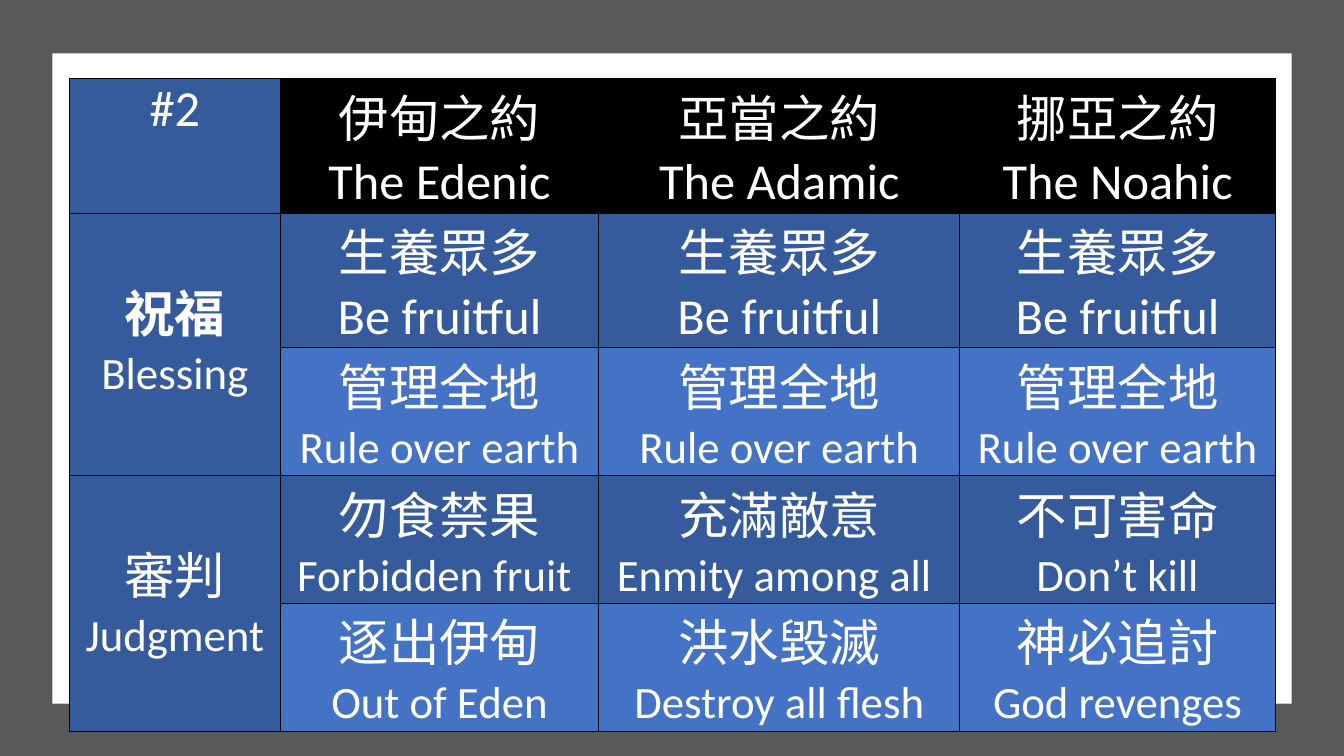
from lxml.etree import SubElement
from pptx import Presentation
from pptx.dml.color import RGBColor
from pptx.enum.shapes import MSO_SHAPE
from pptx.enum.text import PP_ALIGN
from pptx.oxml.ns import qn
from pptx.util import Inches, Pt

GREY, WHITE, BLACK = "595959", "FFFFFF", "000000"
DARK_BLUE, LIGHT_BLUE = "365B9D", "4472C4"
COLUMN_WIDTHS = [2.09, 3.16, 3.58, 3.13]
ROW_HEIGHTS = [0.99, 1.2, 1.14, 1.13, 1.27]

LATIN_LARGE = {"size": Pt(36), "name": "Calibri", "bold": False}
LATIN_SMALL = {**LATIN_LARGE, "size": Pt(32)}
CHINESE = {**LATIN_LARGE, "name": "Roboto"}
CHINESE_BOLD = {**CHINESE, "bold": True}
MARGINS = {"margin_left": Inches(0.15), "margin_right": Inches(0.15),
           "margin_top": 0, "margin_bottom": 0}

COVENANTS = [
    [[("伊甸之約", LATIN_LARGE)], [("The Edenic", LATIN_LARGE)]],
    [[("亞當之約", LATIN_LARGE)], [("The Adamic", LATIN_LARGE)]],
    [[("挪", CHINESE), ("亞之約", LATIN_LARGE)], [("The Noahic", LATIN_LARGE)]],
]
THEMES = {
    1: [[("祝福", CHINESE_BOLD)], [("Blessing", LATIN_SMALL)]],
    3: [[("審判", CHINESE), ("Judgment", LATIN_SMALL)]],
}
TERMS = [
    (LATIN_LARGE, [("生養眾多", "Be fruitful")] * 3),
    (LATIN_SMALL, [("管理全地", "Rule over earth")] * 3),
    (LATIN_SMALL, [("勿食禁果", "Forbidden fruit "), ("充滿敵意", "Enmity among all "),
                   ("不可害命", "Don’t kill")]),
    (LATIN_SMALL, [("逐出伊甸", "Out of Eden"), ("洪水毀滅", "Destroy all flesh"),
                   ("神必追討", "God revenges")]),
]


def color(value):
    """Return the colour for a hex string."""
    return RGBColor.from_string(value)


def apply(target, values):
    """Set each named attribute on the target."""
    for name, value in values.items():
        setattr(target, name, value)


def add_panel(page, left, top, width, height, fill):
    """Add a plain rectangle without outline."""
    panel = page.shapes.add_shape(MSO_SHAPE.RECTANGLE, Inches(left), Inches(top),
                                  Inches(width), Inches(height))
    panel.shadow.inherit = False
    panel.fill.solid()
    panel.fill.fore_color.rgb = color(fill)
    panel.line.fill.background()


def style_cell(cell, fill):
    """Give a cell its margins, black borders and fill."""
    apply(cell, MARGINS)
    properties = cell._tc.get_or_add_tcPr()
    for side in ("a:lnL", "a:lnR", "a:lnT", "a:lnB"):
        border = SubElement(properties, qn(side), w=str(Pt(1)))
        paint = SubElement(border, qn("a:solidFill"))
        SubElement(paint, qn("a:srgbClr"), val=BLACK)
    cell.fill.solid()
    cell.fill.fore_color.rgb = color(fill)


def write_cell(cell, lines):
    """Write centred paragraphs made of formatted runs."""
    frame = cell.text_frame
    for index, runs in enumerate(lines):
        para = frame.add_paragraph() if index else frame.paragraphs[0]
        para.alignment = PP_ALIGN.CENTER
        for text, font in runs:
            span = para.add_run()
            span.text = text
            apply(span.font, font)
            span.font.color.rgb = color(WHITE)


def cell_fill(row, column):
    """Choose the fill from the place of the cell."""
    if column == 0:
        return DARK_BLUE
    if row == 0:
        return BLACK
    return DARK_BLUE if row % 2 else LIGHT_BLUE


def add_covenant_table(page):
    """Add the table that compares the three covenants."""
    frame = page.shapes.add_table(len(ROW_HEIGHTS), len(COLUMN_WIDTHS),
                                  Inches(0.69), Inches(0.78),
                                  Inches(sum(COLUMN_WIDTHS)), Inches(sum(ROW_HEIGHTS)))
    table = frame.table
    apply(table, {"first_row": False, "horz_banding": False})
    for column, width in zip(table.columns, COLUMN_WIDTHS):
        column.width = Inches(width)
    for row, height in enumerate(ROW_HEIGHTS):
        table.rows[row].height = Inches(height)
        for column in range(len(COLUMN_WIDTHS)):
            style_cell(table.cell(row, column), cell_fill(row, column))

    write_cell(table.cell(0, 0), [[("#2", LATIN_LARGE)]])
    for column, lines in enumerate(COVENANTS, 1):
        write_cell(table.cell(0, column), lines)
    for row, lines in THEMES.items():
        theme = table.cell(row, 0)
        theme.merge(table.cell(row + 1, 0))
        theme.margin_top = Inches(0.6)
        write_cell(theme, lines)
    for row, (latin, terms) in enumerate(TERMS, 1):
        for column, (chinese, english) in enumerate(terms, 1):
            write_cell(table.cell(row, column), [[(chinese, CHINESE)], [(english, latin)]])


def main():
    """Build and save the slide."""
    deck = Presentation()
    apply(deck, {"slide_width": Inches(13.33), "slide_height": Inches(7.5)})
    page = deck.slides.add_slide(deck.slide_layouts[6])
    add_panel(page, 0, 0, 13.33, 7.5, GREY)
    add_panel(page, 0.52, 0.53, 12.29, 6.45, WHITE)
    add_covenant_table(page)
    deck.save("out.pptx")


if __name__ == "__main__":
    main()
